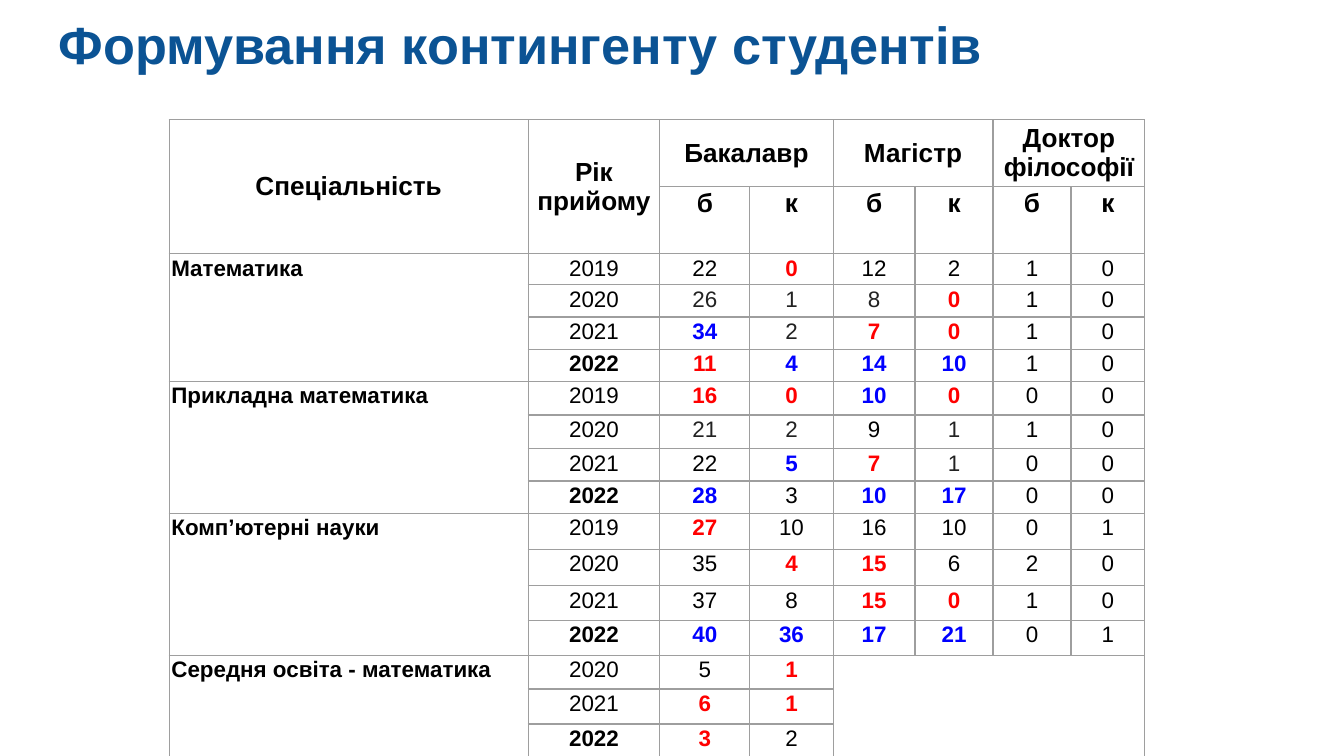
from lxml import etree
from pptx import Presentation
from pptx.dml.color import RGBColor
from pptx.enum.text import MSO_ANCHOR, PP_ALIGN
from pptx.oxml.ns import qn
from pptx.util import Inches, Pt

CENTER, LEFT = PP_ALIGN.CENTER, PP_ALIGN.LEFT
MIDDLE, TOP = MSO_ANCHOR.MIDDLE, MSO_ANCHOR.TOP

COLUMN_WIDTHS = [2.67, 0.98, 0.67, 0.62, 0.61, 0.58, 0.58, 0.55]
ROW_HEIGHTS = [0.5, 0.23, 0.22, 0.24, 0.24, 0.24, 0.25, 0.25, 0.24, 0.24,
               0.27, 0.27, 0.26, 0.26, 0.25, 0.26, 0.26]
BORDER = "9E9E9E"
CELL_MARGIN = Pt(1.12)

# A letter after a number marks it: r = red bold, b = blue bold, g = dark grey
MARKS = {"r": ("FF0000", True), "b": ("0000FF", True), "g": ("222222", False)}
INTAKE = {
    "Математика": ["2019 22 0r 12 2 1 0",
                   "2020 26g 1g 8g 0r 1 0",
                   "2021 34b 2g 7r 0r 1 0",
                   "2022 11r 4b 14b 10b 1 0"],
    "Прикладна математика": ["2019 16r 0r 10b 0r 0 0",
                             "2020 21g 2g 9 1g 1 0",
                             "2021 22 5b 7r 1g 0 0",
                             "2022 28b 3 10b 17b 0 0"],
    "Комп’ютерні науки": ["2019 27r 10 16 10 0 1",
                          "2020 35 4r 15r 6 2 0",
                          "2021 37 8 15r 0r 1 0",
                          "2022 40b 36b 17b 21b 0 1"],
    "Середня освіта - математика": ["2020 5 1r",
                                    "2021 6r 1r",
                                    "2022 3r 2"],
}


def write(frame, text, size, color="000000", bold=True, align=CENTER):
    paragraph = frame.paragraphs[0]
    paragraph.alignment = align
    run = paragraph.add_run()
    run.text = text
    for name, value in {"name": "Arial", "size": Pt(size), "bold": bold}.items():
        setattr(run.font, name, value)
    run.font.color.rgb = RGBColor.from_string(color)
    return paragraph


prs = Presentation()
prs.slide_width = Inches(10)
prs.slide_height = prs.slide_width * 9 // 16
slide = prs.slides.add_slide(prs.slide_layouts[6])

title = slide.shapes.add_textbox(Inches(0.34), Inches(-0.01),
                                 Inches(9.32), Inches(0.63)).text_frame
title.word_wrap = True
for side in ("left", "top", "right", "bottom"):
    setattr(title, f"margin_{side}", Inches(0.1))
write(title, "Формування контингенту студентів", 28, "0B5394", align=LEFT)

table = slide.shapes.add_table(
    len(ROW_HEIGHTS), len(COLUMN_WIDTHS), Inches(1.26), Inches(0.89),
    Inches(sum(COLUMN_WIDTHS)), Inches(sum(ROW_HEIGHTS))).table
table.first_row = table.horz_banding = False
for column, width in zip(table.columns, COLUMN_WIDTHS):
    column.width = Inches(width)
for row, height in zip(table.rows, ROW_HEIGHTS):
    row.height = Inches(height)

for cell in table.iter_cells():
    cell.fill.background()
    cell.vertical_anchor = TOP
    for side in ("left", "top", "right", "bottom"):
        setattr(cell, f"margin_{side}", CELL_MARGIN)
    properties = cell._tc.get_or_add_tcPr()
    for position, edge in enumerate(("lnL", "lnR", "lnT", "lnB")):
        line = etree.Element(qn(f"a:{edge}"), w=str(Pt(0.75)))
        solid = etree.SubElement(line, qn("a:solidFill"))
        etree.SubElement(solid, qn("a:srgbClr"), val=BORDER)
        properties.insert(position, line)

# Header: two tall cells, then three degrees of two columns each
for col, heading in enumerate(["Спеціальність", "Рік прийому"]):
    table.cell(0, col).merge(table.cell(1, col))
    table.cell(0, col).vertical_anchor = MIDDLE
    write(table.cell(0, col).text_frame, heading, 14)
for col, degree in zip((2, 4, 6), ["Бакалавр", "Магістр", "Доктор філософії"]):
    table.cell(0, col).merge(table.cell(0, col + 1))
    table.cell(0, col).vertical_anchor = MIDDLE
    write(table.cell(0, col).text_frame, degree, 14)
    for offset, funding in enumerate("бк"):
        cell = table.cell(1, col + offset)
        cell.margin_top = Inches(0.1)
        write(cell.text_frame, funding, 14).line_spacing = 0.5

# Body: one block of years per speciality
first = 2
for speciality, years in INTAKE.items():
    last = first + len(years) - 1
    table.cell(first, 0).merge(table.cell(last, 0))
    write(table.cell(first, 0).text_frame, speciality, 12, align=LEFT)
    for row, counts in enumerate(years, first):
        for col, entry in enumerate(counts.split(), 1):
            color, bold = MARKS.get(entry[-1], ("000000", entry == "2022"))
            write(table.cell(row, col).text_frame, entry.rstrip("rbg"), 12, color, bold)
    first = last + 1

# The last speciality has only bachelors
table.cell(14, 4).merge(table.cell(16, 7))

prs.save("out.pptx")
